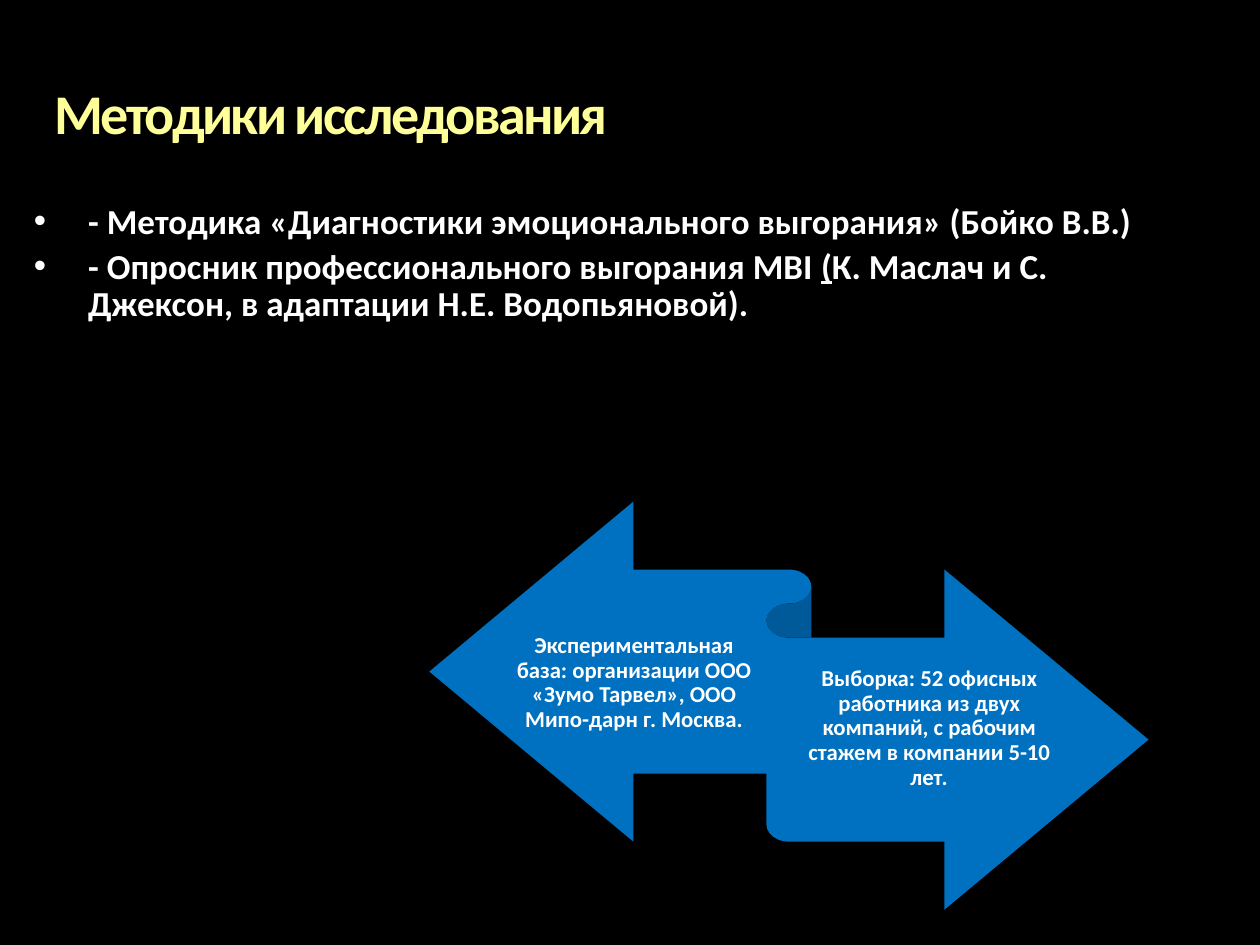
from lxml.etree import SubElement
from pptx import Presentation
from pptx.dml.color import RGBColor
from pptx.enum.shapes import MSO_SHAPE
from pptx.enum.text import MSO_ANCHOR, PP_ALIGN
from pptx.oxml.ns import qn
from pptx.util import Pt

COLORS = {"background": "000000", "title": "FFFF99", "text": "FFFFFF", "ribbon": "0070C0"}


def add_frame(left, top, width, height, inset=0):
    """Add a wrapping text box with no side margins and return its text frame."""
    frame = slide.shapes.add_textbox(Pt(left), Pt(top), Pt(width), Pt(height)).text_frame
    frame.word_wrap = True
    frame.margin_left = frame.margin_right = 0
    frame.margin_top = frame.margin_bottom = Pt(inset)
    return frame


def style(paragraph, size, color):
    paragraph.line_spacing = 0.9
    paragraph.font.name = "Calibri"
    paragraph.font.size = Pt(size)
    paragraph.font.bold = True
    paragraph.font.color.rgb = RGBColor.from_string(COLORS[color])


prs = Presentation()
prs.slide_width, prs.slide_height = Pt(720), Pt(540)
slide = prs.slides.add_slide(prs.slide_layouts[6])
slide.background.fill.solid()
slide.background.fill.fore_color.rgb = RGBColor.from_string(COLORS["background"])

# Methods: each one is a list of (text, underlined) pieces
methods = [
    [("- Методика «Диагностики эмоционального выгорания» (Бойко В.В.)", False)],
    [
        ("- Опросник профессионального выгорания MBI ", False),
        ("(", True),
        ("К. Маслач и С. Джексон, в адаптации Н.Е. Водопьяновой).", False),
    ],
]
method_list = add_frame(19.4, 116.6, 660, 70.6)
for index, pieces in enumerate(methods):
    method = method_list.add_paragraph() if index else method_list.paragraphs[0]
    properties = method._p.get_or_add_pPr()
    properties.set("marL", str(Pt(31)))
    properties.set("indent", str(Pt(-31)))
    SubElement(properties, qn("a:buFont")).set("typeface", "Arial")
    SubElement(properties, qn("a:buChar")).set("char", "•")
    style(method, 20, "text")
    if index:
        method.space_before = Pt(4)
    for text, underlined in pieces:
        run = method.add_run()
        run.text = text
        if underlined:
            run.font.underline = True

title = add_frame(31, 49, 660, 69.8).paragraphs[0]
style(title, 32, "title")
title_run = title.add_run()
title_run.text = "Методики исследования"
title_run.font._element.set("spc", "-150")

ribbon = slide.shapes.add_shape(
    MSO_SHAPE.LEFT_RIGHT_RIBBON, Pt(245.3), Pt(286.6), Pt(411), Pt(233.2)
)
ribbon.shadow.inherit = False
ribbon.fill.solid()
ribbon.fill.fore_color.rgb = RGBColor.from_string(COLORS["ribbon"])
ribbon.line.fill.background()

arrow_labels = [
    (294.5, 350, 135.4,
     "Экспериментальная база: организации ООО «Зумо Тарвел», ООО Мипо-дарн г. Москва."),
    (450.7, 376, 160.5,
     "Выборка: 52 офисных работника из двух компаний, с рабочим стажем в компании 5-10 лет."),
]
for left, top, width, text in arrow_labels:
    frame = add_frame(left, top, width, 80.6, inset=3.6)
    frame.vertical_anchor = MSO_ANCHOR.MIDDLE
    label = frame.paragraphs[0]
    label.text = text
    label.alignment = PP_ALIGN.CENTER
    style(label, 13, "text")

prs.save("out.pptx")
